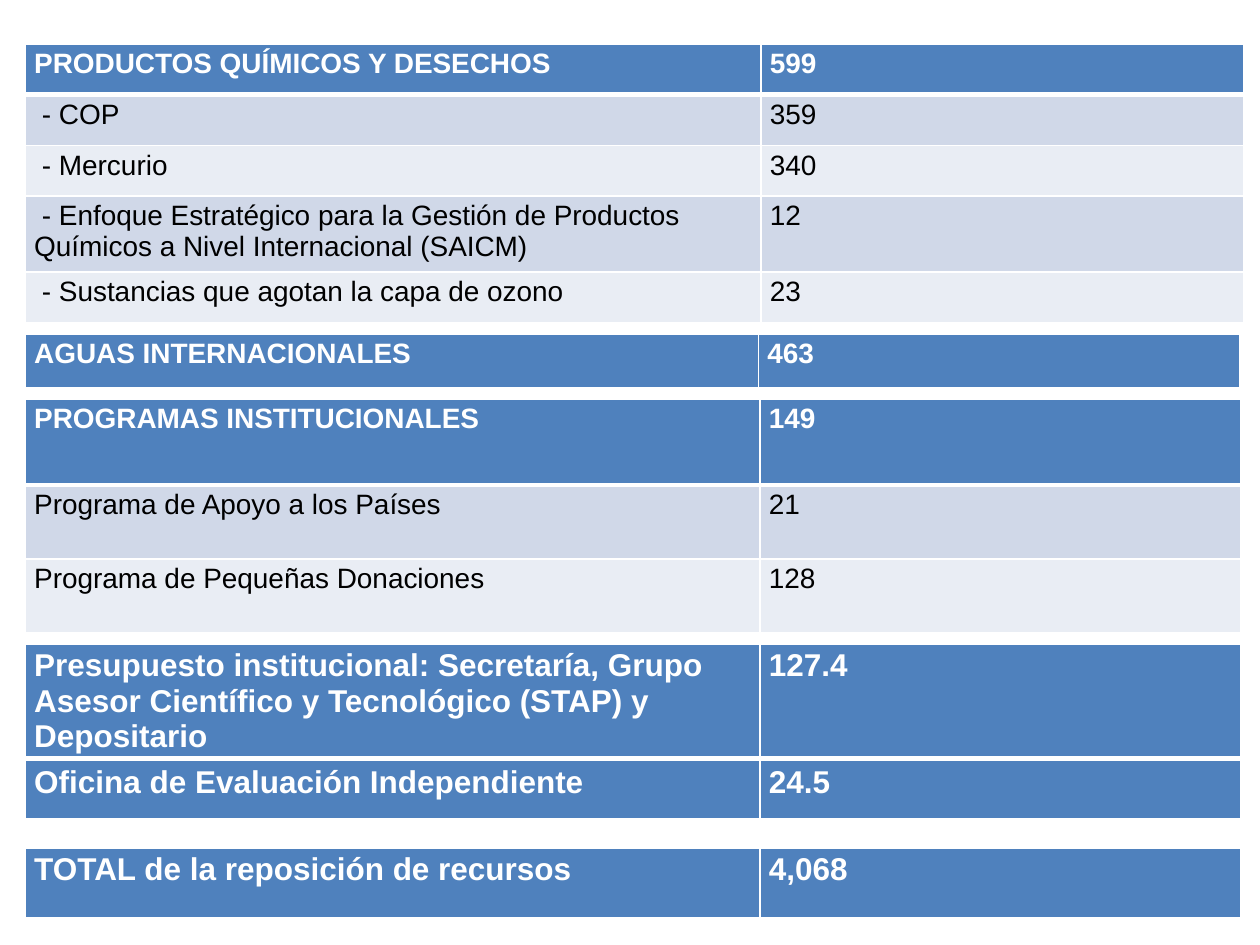
from dataclasses import dataclass

from lxml.etree import SubElement as Sub
from pptx import Presentation as Deck
from pptx.dml.color import RGBColor as Rgb
from pptx.oxml.ns import qn
from pptx.util import Cm, Pt


@dataclass(frozen=True)
class Theme:
    font: str = "Arial"
    blue: str = "4F81BD"
    bands: tuple = ("D0D8E8", "E9EDF4")
    white: str = "FFFFFF"
    black: str = "000000"
    body: int = 16
    large: int = 18
    thin: int = 1
    thick: int = 3


THEME = Theme()
LEFT = 0.51
WIDE = (14.83, 9.73)
SLIM = (14.78, 9.7)
MID = (14.81, 9.7)

# Each block: top, column widths, type size, rows of (height, label, amount)
BLOCKS = [
    (6.73, SLIM, THEME.body, [(1.12, "AGUAS INTERNACIONALES", "463")]),
    (0.89, WIDE, THEME.body, [
        (1.02, "PRODUCTOS QUÍMICOS Y DESECHOS", "599"),
        (1.02, " - COP", "359"),
        (1.02, " - Mercurio", "340"),
        (1.53, " - Enfoque Estratégico para la Gestión de Productos "
               "Químicos a Nivel Internacional (SAICM)", "12"),
        (1.02, " - Sustancias que agotan la capa de ozono", "23"),
    ]),
    (12.98, MID, THEME.large, [
        (1.75, "Presupuesto institucional: Secretaría, Grupo Asesor "
               "Científico y Tecnológico (STAP) y Depositario", "127.4"),
    ]),
    (8.05, MID, THEME.body, [
        (1.73, "PROGRAMAS INSTITUCIONALES", "149"),
        (1.49, "Programa de Apoyo a los Países", "21"),
        (1.49, "Programa de Pequeñas Donaciones", "128"),
    ]),
    (17.09, MID, THEME.large,
     [(1.45, "TOTAL de la reposición de recursos", "4,068")]),
    (15.32, MID, THEME.large,
     [(1.22, "Oficina de Evaluación Independiente", "24.5")]),
]


def write(cell, text, *, size, color, bold=False):
    """Put text with its format into a cell."""
    cell.margin_left = cell.margin_right = Cm(0.18)
    cell.margin_top = cell.margin_bottom = Cm(0.09)
    run = cell.text_frame.paragraphs[0].add_run()
    run.text = text
    font = run.font
    font.name, font.size, font.bold = THEME.font, Pt(size), bold
    font.color.rgb = Rgb.from_string(color)


def edge(cell, base):
    """Draw the four white borders; base is the width of the lower one."""
    props = cell._tc.get_or_add_tcPr()
    for side in "LRTB":
        width = base if side == "B" else THEME.thin
        line = Sub(props, qn(f"a:ln{side}"), w=str(Pt(width)))
        fill = Sub(line, qn("a:solidFill"))
        Sub(fill, qn("a:srgbClr"), val=THEME.white)


def paint(cell, color):
    cell.fill.solid()
    cell.fill.fore_color.rgb = Rgb.from_string(color)


def add_block(slide, top, widths, size, rows):
    """Add a table whose first row is a heading and the rest are banded."""
    high = sum(row[0] for row in rows)
    frame = slide.shapes.add_table(len(rows), len(widths), Cm(LEFT), Cm(top),
                                   Cm(sum(widths)), Cm(high))
    table = frame.table
    table.horz_banding = False
    for col, width in zip(table.columns, widths):
        col.width = Cm(width)
    for i, (height, *texts) in enumerate(rows):
        head = i == 0
        table.rows[i].height = Cm(height)
        for j, text in enumerate(texts):
            cell = table.cell(i, j)
            write(cell, text, size=size, bold=head,
                  color=THEME.white if head else THEME.black)
            edge(cell, THEME.thick if head else THEME.thin)
            paint(cell, THEME.blue if head else THEME.bands[(i - 1) % 2])


def main():
    # Page
    deck = Deck()
    deck.slide_width, deck.slide_height = Cm(25.4), Cm(19.05)
    slide = deck.slides.add_slide(deck.slide_layouts[6])
    # Budget tables
    for block in BLOCKS:
        add_block(slide, *block)
    deck.save("out.pptx")


if __name__ == "__main__":
    main()
